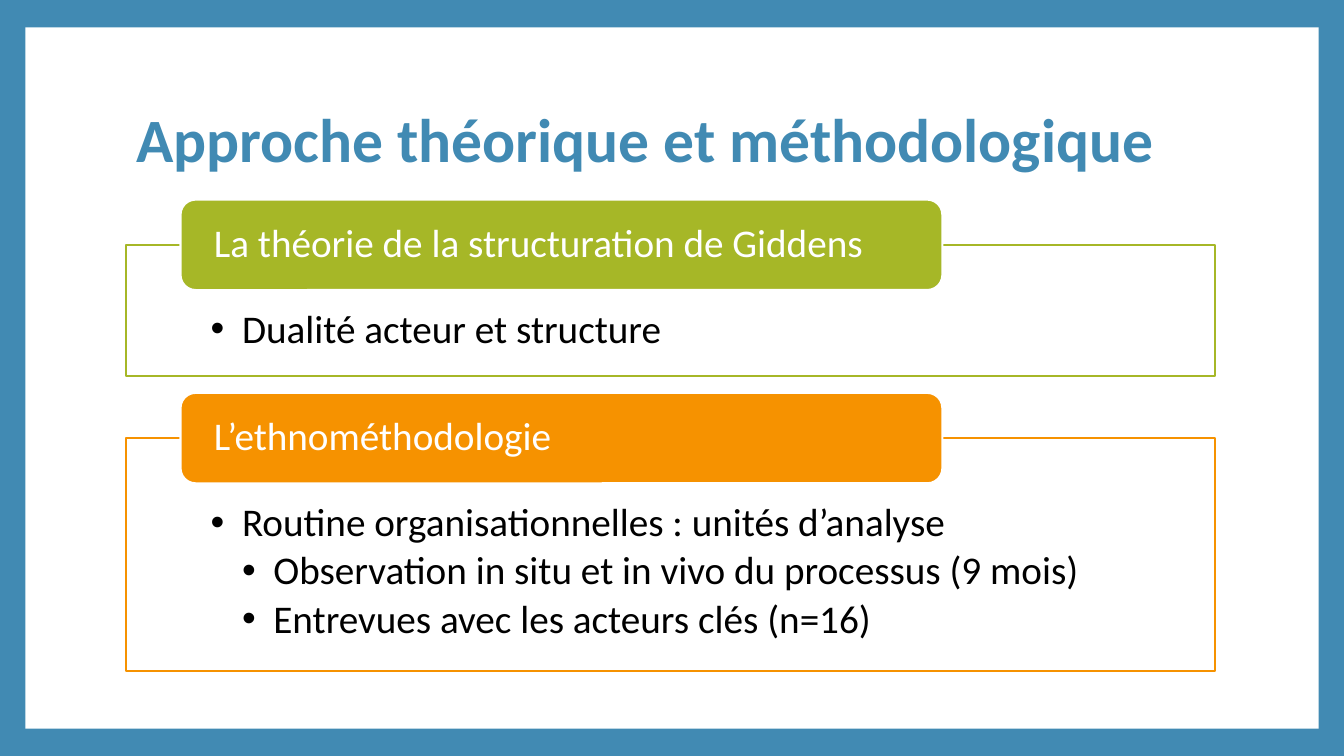
"""Build the slide on the theoretical and methodological approach."""
import dataclasses

import lxml.etree
import pptx
import pptx.dml.color
import pptx.enum.shapes
import pptx.enum.text
import pptx.oxml.ns
import pptx.util

Cm = pptx.util.Cm
Pt = pptx.util.Pt
RGB = pptx.dml.color.RGBColor.from_string
Text = pptx.enum.text

HEADING = "Approche théorique et méthodologique"
SECTIONS = [
    {
        "label": "La théorie de la structuration de Giddens",
        "points": [(0, "Dualité acteur et structure")],
        "color": "A6B727",
        "height": 3.3,
    },
    {
        "label": "L’ethnométhodologie",
        "points": [
            (0, "Routine organisationnelles : unités d’analyse"),
            (1, "Observation in situ et in vivo du processus (9 mois)"),
            (1, "Entrevues avec les acteurs clés (n=16)"),
        ],
        "color": "F69200",
        "height": 5.87,
    },
]


@dataclasses.dataclass(frozen=True)
class Theme:
    """Colours, font and sizes of the slide."""
    blue: str = "418AB3"
    white: str = "FFFFFF"
    black: str = "000000"
    font: str = "Calibri"
    heading_size: int = 44
    text_size: int = 28
    outline: float = 1.5


THEME = Theme()
SLIDE_WIDTH, SLIDE_HEIGHT = 33.87, 19.05
MARGIN_X, MARGIN_Y = 0.64, 0.69
LEFT, WIDTH = 3.18, 27.43
HEADING_TOP, HEADING_HEIGHT = 1.7, 3.76
FIRST_TAB_TOP, SECTION_GAP = 5.03, 0.43
TAB_LEFT, TAB_WIDTH, TAB_HEIGHT = 4.55, 19.2, 2.28
TAB_INSET = 0.84
INDENT = 0.79


def apply(target, formats):
    """Set each named attribute on the target."""
    for name, value in formats.items():
        setattr(target, name, value)


def place(part, left, top, width, height):
    """Position a part, in centimetres."""
    apply(part, {"left": Cm(left), "top": Cm(top),
                 "width": Cm(width), "height": Cm(height)})


def paint(part, fill, line=None):
    """Give a part a solid fill and an optional outline."""
    part.fill.solid()
    part.fill.fore_color.rgb = RGB(fill)
    if line:
        part.line.color.rgb = RGB(line)
        part.line.width = Pt(THEME.outline)
    else:
        part.line.fill.background()


def write(paragraph, wording, color, size=THEME.text_size, bold=False, after=0):
    """Fill a left-aligned paragraph with formatted text."""
    paragraph.text = wording
    apply(paragraph, {"alignment": Text.PP_ALIGN.LEFT, "line_spacing": 0.9,
                      "space_before": Pt(0), "space_after": Pt(after)})
    font = paragraph.runs[0].font
    apply(font, {"name": THEME.font, "size": Pt(size), "bold": bold})
    font.color.rgb = RGB(color)


def add_bullet(paragraph, level):
    """Set a hanging bullet for the level."""
    paragraph.level = level
    properties = paragraph._p.get_or_add_pPr()
    properties.set("marL", str(Cm(INDENT * (level + 1))))
    properties.set("indent", str(-Cm(INDENT)))
    bullet = lxml.etree.SubElement(properties, pptx.oxml.ns.qn("a:buChar"))
    bullet.set("char", "•")


def add_panel(slide):
    """Put the white panel behind everything else."""
    panel = slide.shapes.add_shape(
        pptx.enum.shapes.MSO_SHAPE.RECTANGLE, Cm(MARGIN_X), Cm(MARGIN_Y),
        Cm(SLIDE_WIDTH - 2 * MARGIN_X), Cm(SLIDE_HEIGHT - 2 * MARGIN_Y))
    panel.shadow.inherit = False
    paint(panel, THEME.white)
    slide.shapes._spTree.insert(2, panel._element)


def add_heading(slide):
    """Fill the title placeholder."""
    heading = slide.shapes.title
    place(heading, LEFT, HEADING_TOP, WIDTH, HEADING_HEIGHT)
    apply(heading.text_frame, {"vertical_anchor": Text.MSO_ANCHOR.MIDDLE,
                               "auto_size": Text.MSO_AUTO_SIZE.NONE})
    write(heading.text_frame.paragraphs[0], HEADING, THEME.blue,
          THEME.heading_size, True)


def add_section(slide, body, section, tab_top):
    """Draw an outlined list with its coloured tab."""
    place(body, LEFT, tab_top + TAB_HEIGHT / 2, WIDTH, section["height"])
    paint(body, THEME.white, section["color"])
    frame = body.text_frame
    apply(frame, {"margin_left": Cm(2.13), "margin_right": Cm(2.13),
                  "margin_top": Cm(1.63), "margin_bottom": Cm(0.56),
                  "vertical_anchor": Text.MSO_ANCHOR.TOP, "word_wrap": True,
                  "auto_size": Text.MSO_AUTO_SIZE.NONE})
    for index, (level, wording) in enumerate(section["points"]):
        point = frame.add_paragraph() if index else frame.paragraphs[0]
        write(point, wording, THEME.black, after=THEME.text_size * 0.15)
        add_bullet(point, level)

    tab = slide.shapes.add_shape(
        pptx.enum.shapes.MSO_SHAPE.ROUNDED_RECTANGLE, Cm(TAB_LEFT), Cm(tab_top),
        Cm(TAB_WIDTH), Cm(TAB_HEIGHT))
    tab.shadow.inherit = False
    paint(tab, section["color"], THEME.white)
    apply(tab.text_frame, {"margin_left": Cm(TAB_INSET - 0.11),
                           "margin_right": Cm(TAB_INSET - 0.11),
                           "margin_top": 0, "margin_bottom": 0,
                           "vertical_anchor": Text.MSO_ANCHOR.MIDDLE,
                           "word_wrap": True})
    write(tab.text_frame.paragraphs[0], section["label"], THEME.white)


def main():
    """Assemble and save the presentation."""
    deck = pptx.Presentation()
    apply(deck, {"slide_width": Cm(SLIDE_WIDTH), "slide_height": Cm(SLIDE_HEIGHT)})
    slide = deck.slides.add_slide(deck.slide_layouts.get_by_name("Two Content"))
    slide.background.fill.solid()
    slide.background.fill.fore_color.rgb = RGB(THEME.blue)
    add_panel(slide)
    add_heading(slide)
    tab_top = FIRST_TAB_TOP
    bodies = list(slide.placeholders)[1:]
    for body, section in zip(bodies, SECTIONS):
        add_section(slide, body, section, tab_top)
        tab_top += TAB_HEIGHT / 2 + section["height"] + SECTION_GAP
    deck.save("out.pptx")


if __name__ == "__main__":
    main()
